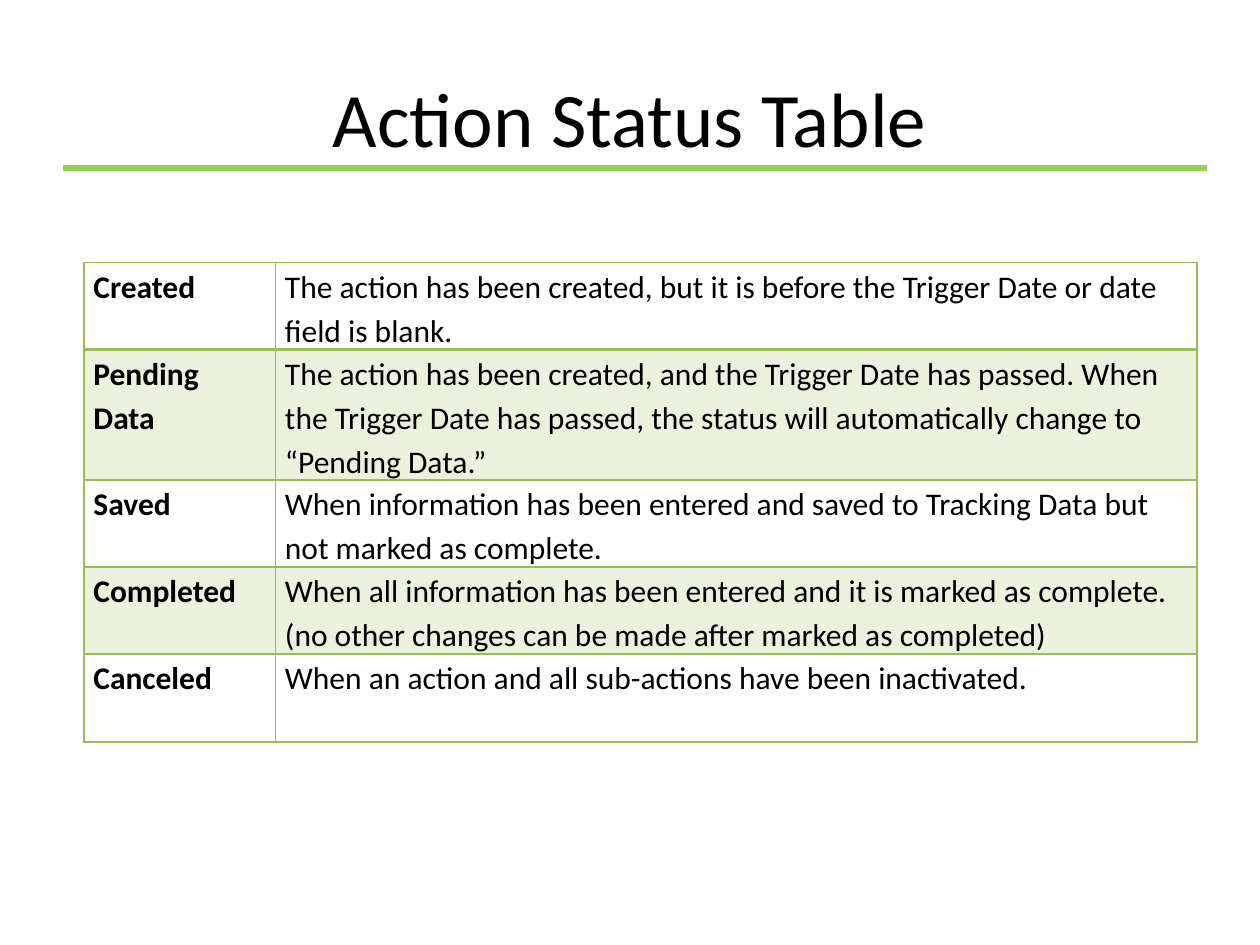
from dataclasses import dataclass

from lxml.etree import SubElement
from pptx import Presentation
from pptx.dml.color import RGBColor as Rgb
from pptx.enum.shapes import MSO_CONNECTOR as Connector
from pptx.enum.text import MSO_ANCHOR as Anchor, PP_ALIGN as Align
from pptx.oxml import parse_xml
from pptx.oxml.ns import nsdecls, qn
from pptx.util import Pt


@dataclass(frozen=True)
class Theme:
    font: str = "Calibri"
    ink: str = "000000"
    rule: str = "92D050"
    grid: str = "9BBB59"
    band_alpha: int = 20000
    title_size: int = 44
    body_size: int = 18


@dataclass(frozen=True)
class Status:
    name: str
    meaning: str
    height: float
    banded: bool = False
    bottom_border: float = 1


THEME = Theme()
COLUMN_WIDTHS = (109.5, 526.5)
STATUSES = (
    Status("Created", "The action has been created, but it is before the Trigger Date "
           "or date field is blank.", 36, bottom_border=2),
    Status("Pending Data", "The action has been created, and the Trigger Date has passed. "
           "When the Trigger Date has passed, the status will automatically change to "
           "“Pending Data.”", 48, banded=True),
    Status("Saved", "When information has been entered and saved to Tracking Data but "
           "not marked as complete.", 47),
    Status("Completed", "When all information has been entered and it is marked as complete. "
           "(no other changes can be made after marked as completed)", 47, banded=True),
    Status("Canceled", "When an action and all sub-actions have been inactivated.", 50.5),
)


def style_text(paragraph, size: float, bold: bool = False) -> None:
    for run in paragraph.runs:
        run.font.name = THEME.font
        run.font.size = Pt(size)
        run.font.bold = bold
        run.font.color.rgb = Rgb.from_string(THEME.ink)


def draw_title(slide, title: str) -> None:
    heading = slide.shapes.add_textbox(Pt(36), Pt(21.6), Pt(648), Pt(90))
    frame = heading.text_frame
    frame.word_wrap = True
    frame.vertical_anchor = Anchor.MIDDLE
    frame.text = title
    frame.paragraphs[0].alignment = Align.CENTER
    style_text(frame.paragraphs[0], THEME.title_size)


def draw_rule(slide) -> None:
    rule = slide.shapes.add_connector(Connector.STRAIGHT, Pt(36), Pt(96), Pt(690), Pt(96))
    rule.line.color.rgb = Rgb.from_string(THEME.rule)
    rule.line.width = Pt(3)
    SubElement(rule._element.spPr, qn("a:effectLst"))


def fill_cell(cell, banded: bool) -> None:
    if not banded:
        cell.fill.background()
        return
    cell.fill.solid()
    cell.fill.fore_color.rgb = Rgb.from_string(THEME.grid)
    tint = cell._tc.tcPr.find(".//" + qn("a:srgbClr"))
    SubElement(tint, qn("a:alpha"), val=str(THEME.band_alpha))


def border_cell(cell, top: float, bottom: float) -> None:
    widths = {"lnL": 1, "lnR": 1, "lnT": top, "lnB": bottom}
    for place, (side, width) in enumerate(widths.items()):
        cell._tc.tcPr.insert(place, parse_xml(
            f'<a:{side} {nsdecls("a")} w="{Pt(width)}"><a:solidFill>'
            f'<a:srgbClr val="{THEME.grid}"/></a:solidFill></a:{side}>'))


def write_cell(cell, text: str, bold: bool) -> None:
    cell.margin_left = cell.margin_right = Pt(5.4)
    cell.margin_top = cell.margin_bottom = 0
    cell.text_frame.text = text
    paragraph = cell.text_frame.paragraphs[0]
    paragraph.line_spacing = 1.15
    style_text(paragraph, THEME.body_size, bold)


def draw_statuses(slide, statuses: tuple[Status, ...]) -> None:
    height = sum(status.height for status in statuses)
    table = slide.shapes.add_table(len(statuses), len(COLUMN_WIDTHS), Pt(48), Pt(150),
                                   Pt(sum(COLUMN_WIDTHS)), Pt(height)).table
    table.first_row = table.horz_banding = False
    for column, width in zip(table.columns, COLUMN_WIDTHS):
        column.width = Pt(width)
    top_border = 1
    for row, status in zip(table.rows, statuses):
        row.height = Pt(status.height)
        for cell, text, bold in zip(row.cells, (status.name, status.meaning), (True, False)):
            write_cell(cell, text, bold)
            fill_cell(cell, status.banded)
            border_cell(cell, top_border, status.bottom_border)
        top_border = status.bottom_border


def main() -> None:
    """Build the action status slide and save it."""
    deck = Presentation()
    deck.slide_width, deck.slide_height = Pt(720), Pt(540)
    slide = deck.slides.add_slide(deck.slide_layouts[6])
    draw_rule(slide)
    draw_title(slide, "Action Status Table")
    draw_statuses(slide, STATUSES)
    deck.save("out.pptx")


if __name__ == "__main__":
    main()
